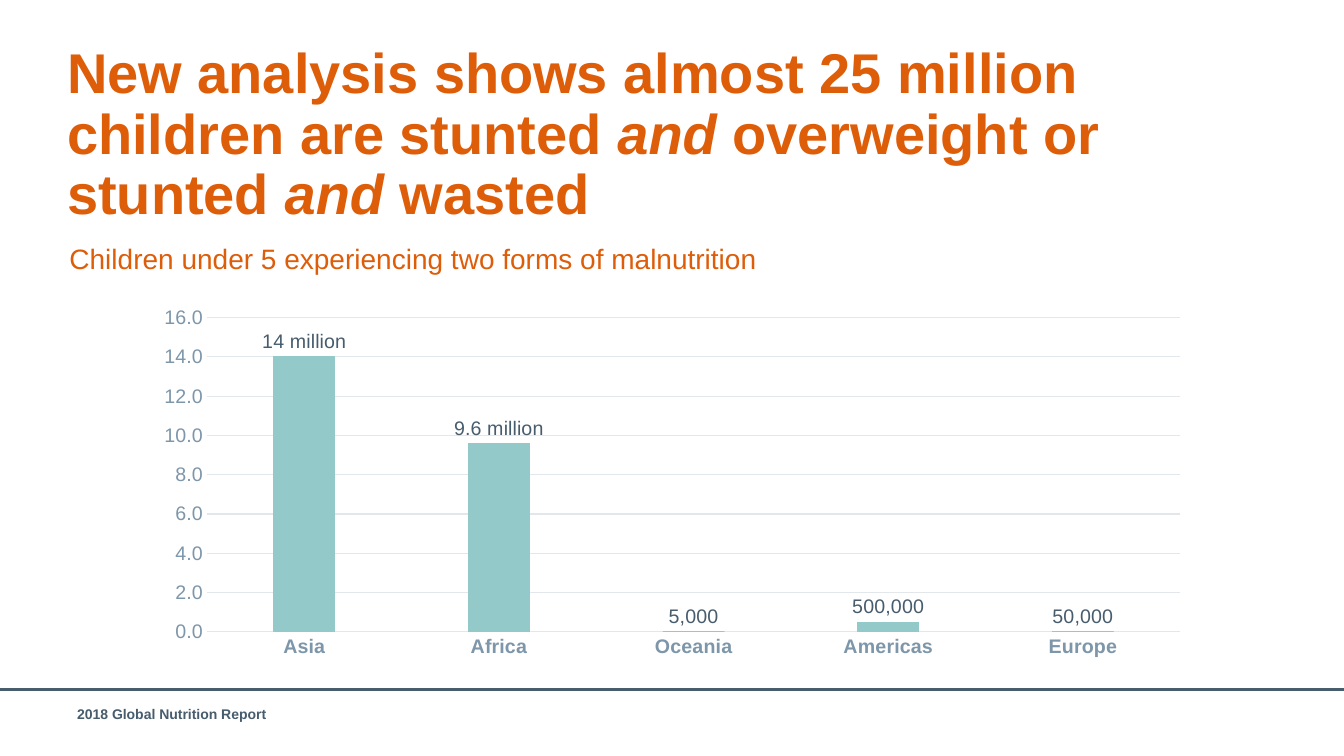
from lxml import etree
from pptx import Presentation
from pptx import util as u
from pptx.chart.data import CategoryChartData
from pptx.dml.color import RGBColor
from pptx.enum import chart as ch, shapes
from pptx.oxml.ns import qn

ORANGE, SLATE, GREY, TEAL, PALE = "DE5D09", "475C6D", "7D96AA", "93CAC9", "E1E7EB"
REGIONS = [
    ("Asia", 14, "14 million"),
    ("Africa", 9.6, "9.6 million"),
    ("Oceania", 0, "5,000"),
    ("Americas", 0.5, "500,000"),
    ("Europe", 0, "50,000"),
]


def rgb(color):
    """Turn a hex string into a colour."""
    return RGBColor.from_string(color)


def style_font(font, size, color, bold=False, italic=False):
    """Set the typeface, size, colour and weight of a font."""
    font.name, font.size = "Arial", u.Pt(size)
    font.bold, font.italic = bold, italic
    font.color.rgb = rgb(color)


def style_line(line, color, width):
    """Set the colour and width of a line."""
    line.color.rgb = rgb(color)
    line.width = u.Pt(width)


def add_text(s, box, runs, size, color, bold=False, inset=(7.2, 3.6)):
    """Add a one-paragraph text box from (text, italic) runs."""
    tf = s.shapes.add_textbox(*map(u.Pt, box)).text_frame
    tf.word_wrap = True
    tf.margin_left = tf.margin_right = u.Pt(inset[0])
    tf.margin_top = tf.margin_bottom = u.Pt(inset[1])
    p = tf.paragraphs[0]
    for words, italic in runs:
        r = p.add_run()
        r.text = words
        style_font(r.font, size, color, bold, italic)
    return p


def add_heading(s, box):
    """Add the title and, below it, the subtitle."""
    x, y, w, h = box
    runs = [
        ("New analysis shows almost 25 million children are stunted ", False),
        ("and", True),
        (" overweight or stunted ", False),
        ("and", True),
        (" wasted", False),
    ]
    p = add_text(s, (x, y, w, h), runs, 40, ORANGE, True, (0, 0))
    p.line_spacing, p.space_before = 0.9, u.Pt(6)
    subtitle = [("Children under 5 experiencing two forms of malnutrition", False)]
    add_text(s, (x - 5.5, y + 136.8, 610, 31.7), subtitle, 20, ORANGE)


def style_axis(axis, bold, line_color=None):
    """Style one chart axis, hiding its line if no colour is given."""
    axis.major_tick_mark = axis.minor_tick_mark = ch.XL_TICK_MARK.NONE
    style_font(axis.tick_labels.font, 14, GREY, bold)
    if line_color:
        style_line(axis.format.line, line_color, 0.75)
    else:
        axis.format.line.fill.background()


def add_region_chart(s, box):
    """Add the column chart of children affected in each region."""
    data = CategoryChartData(number_format="0.0")
    names, values, labels = zip(*REGIONS)
    data.categories = names
    data.add_series("Series 1", values)
    kind = ch.XL_CHART_TYPE.COLUMN_CLUSTERED
    chart = s.shapes.add_chart(kind, *map(u.Pt, box), data).chart
    chart.has_legend = chart.has_title = False
    style_font(chart.font, 14, SLATE)

    style_axis(chart.category_axis, True, PALE)
    axis = chart.value_axis
    style_axis(axis, False)
    axis.minimum_scale, axis.maximum_scale, axis.major_unit = 0, 16, 2
    axis.tick_labels.number_format = "0.0"
    axis.tick_labels.number_format_is_linked = False
    style_line(axis.major_gridlines.format.line, PALE, 0.75)

    plot = chart.plots[0]
    plot.gap_width, plot.overlap, plot.vary_by_categories = 219, -27, False
    series = plot.series[0]
    series.format.fill.solid()
    series.format.fill.fore_color.rgb = rgb(TEAL)
    style_line(series.format.line, TEAL, 0.75)
    for i, label in enumerate(labels):
        data_label = series.points[i].data_label
        r = data_label.text_frame.paragraphs[0].add_run()
        r.text = label
        style_font(r.font, 14, SLATE)
        data_label.position = ch.XL_LABEL_POSITION.OUTSIDE_END


def add_footer(s, box):
    """Add the footer rule and the report name under it."""
    x, y, w, h = box
    ends = map(u.Pt, (x, y, x + w, y))
    rule = s.shapes.add_connector(shapes.MSO_CONNECTOR.STRAIGHT, *ends)
    style_line(rule.line, SLATE, 2)
    etree.SubElement(rule._element.spPr, qn("a:effectLst"))
    report = [("2018 Global Nutrition Report", False)]
    add_text(s, (x + 48, y + 8, 691, h - 18), report, 10, SLATE, True)


def main():
    """Build the slide and save it."""
    prs = Presentation()
    prs.slide_width, prs.slide_height = u.Pt(960), u.Pt(540)
    s = prs.slides.add_slide(prs.slide_layouts[6])
    add_footer(s, (0, 492.5, 960, 47.5))
    add_heading(s, (48, 32.4, 864, 46.8))
    add_region_chart(s, (102.2, 213.8, 756, 261.4))
    prs.save("out.pptx")


if __name__ == "__main__":
    main()
